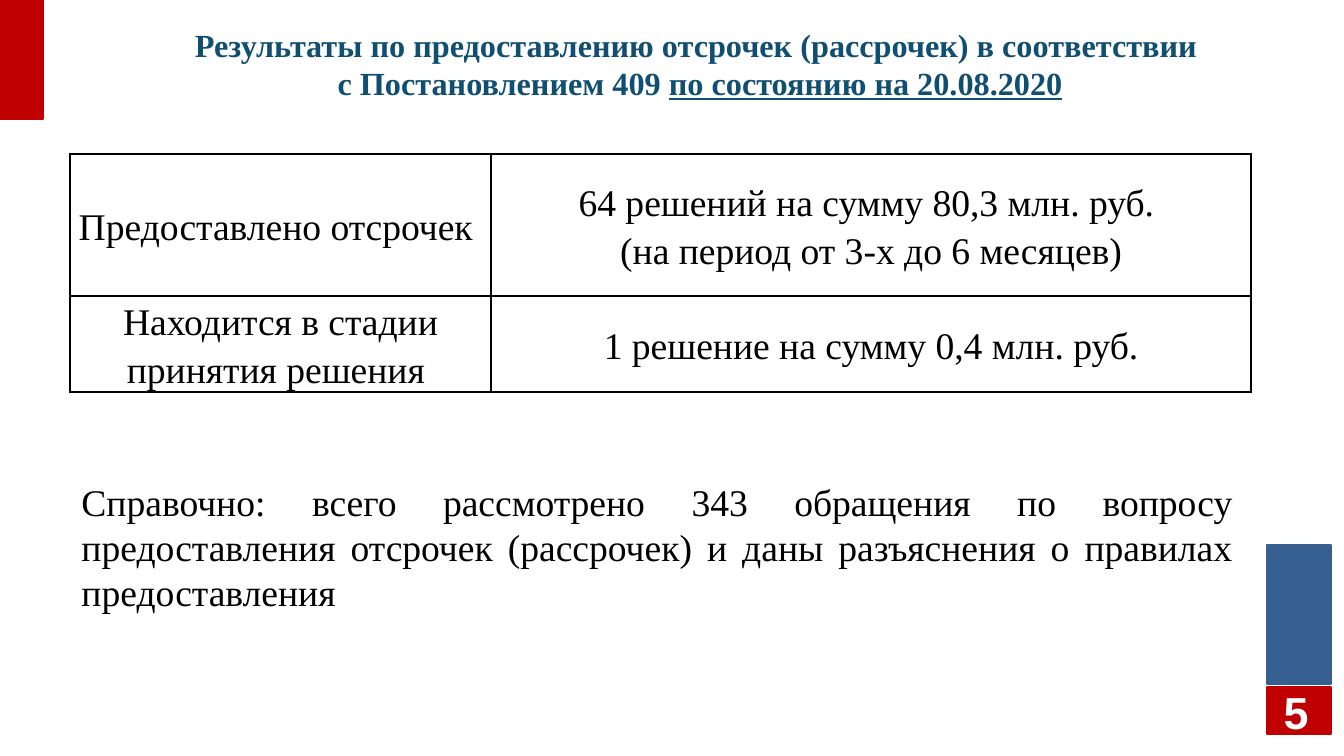
import pptx
import pptx.util
import pptx.dml.color
import pptx.enum.shapes
import pptx.enum.text
import pptx.oxml

SCALE = 9456
SLIDE = (1344, 756)
SERIF = "Times New Roman"
BLOCKS = [
    ((1267, 545, 64, 139), "376092", "3A5F8C"),
    ((1267, 687, 64, 47), "C00000", "C00000"),
    ((0, 0, 43, 119), "C00000", "C00000"),
]
TITLE_BOX = (56, 13, 1288, 101)
TITLE = "Результаты по предоставлению отсрочек (рассрочек) в соответствии \vс Постановлением 409 "
TITLE_DATE = "по состоянию на 20.08.2020"
NUMBER_BOX = (1268, 691, 56, 41)
NUMBER = "5"
TABLE_AT = (70, 154)
COLUMNS = [421, 760]
ROWS = [142, 96]
CELLS = [
    ["Предоставлено отсрочек ",
     "64 решений на сумму 80,3 млн. руб. \v(на период от 3-х до 6 месяцев)"],
    ["Находится в стадии принятия решения ", "1 решение на сумму 0,4 млн. руб."],
]
NOTE_BOX = (72, 474, 1170, 192)
NOTE = ("Справочно: всего рассмотрено 343 обращения по вопросу предоставления "
        "отсрочек (рассрочек) и даны разъяснения о правилах предоставления")
BORDER = ('<a:{} xmlns:a="http://schemas.openxmlformats.org/drawingml/2006/main" w="12700">'
          '<a:solidFill><a:srgbClr val="000000"/></a:solidFill></a:{}>')
ALIGN = pptx.enum.text.PP_ALIGN
MIDDLE = pptx.enum.text.MSO_ANCHOR.MIDDLE


def px(n):
    return pptx.util.Emu(n * SCALE)


def rgb(value):
    return pptx.dml.color.RGBColor.from_string(value)


def place(s, box):
    s.left, s.top, s.width, s.height = map(px, box)


def style(p, size, color, font=SERIF, bold=False, align=ALIGN.CENTER):
    p.alignment = align
    for r in p.runs:
        r.font.name, r.font.size, r.font.bold = font, pptx.util.Pt(size), bold
        r.font.color.rgb = rgb(color)


def center_frame(tf):
    tf.word_wrap = True
    tf.auto_size = pptx.enum.text.MSO_AUTO_SIZE.NONE
    tf.vertical_anchor = MIDDLE
    tf.margin_left = tf.margin_right = 0
    tf.margin_top = tf.margin_bottom = px(5)


def add_blocks(slide):
    for box, fill, line in BLOCKS:
        s = slide.shapes.add_shape(pptx.enum.shapes.MSO_SHAPE.RECTANGLE, *map(px, box))
        s.shadow.inherit = False
        s.fill.solid()
        s.fill.fore_color.rgb = rgb(fill)
        s.line.color.rgb = rgb(line)
        s.line.width = pptx.util.Pt(2)


def add_title(slide):
    s = slide.shapes.title
    place(s, TITLE_BOX)
    center_frame(s.text_frame)
    p = s.text_frame.paragraphs[0]
    p.text = TITLE
    r = p.add_run()
    r.text = TITLE_DATE
    style(p, 24, "104E72", bold=True)
    r.font.underline = True


def add_number(slide):
    tf = slide.shapes.add_textbox(*map(px, NUMBER_BOX)).text_frame
    center_frame(tf)
    tf.text = NUMBER
    style(tf.paragraphs[0], 33.4, "FFFFFF", "Arial", True)


def fill_cell(cell, text):
    cell.text_frame.text = text
    cell.vertical_anchor = MIDDLE
    cell.margin_left = cell.margin_right = px(4)
    cell.margin_top = cell.margin_bottom = 0
    p = cell.text_frame.paragraphs[0]
    p.line_spacing = 1.15
    style(p, 28, "000000")
    cell.fill.background()
    props = cell._tc.get_or_add_tcPr()
    for i, side in enumerate(("lnL", "lnR", "lnT", "lnB")):
        props.insert(i, pptx.oxml.parse_xml(BORDER.format(side, side)))


def add_results(slide):
    box = (*TABLE_AT, sum(COLUMNS), sum(ROWS))
    table = slide.shapes.add_table(len(ROWS), len(COLUMNS), *map(px, box)).table
    table.first_row = table.horz_banding = False
    for column, width in zip(table.columns, COLUMNS):
        column.width = px(width)
    for row, height, texts in zip(table.rows, ROWS, CELLS):
        row.height = px(height)
        for cell, text in zip(row.cells, texts):
            fill_cell(cell, text)


def add_note(slide):
    tf = slide.shapes.add_textbox(*map(px, NOTE_BOX)).text_frame
    tf.word_wrap = True
    tf.text = NOTE
    style(tf.paragraphs[0], 28, "000000", align=ALIGN.JUSTIFY)


def main():
    """Build the slide on the results of deferral requests."""
    prs = pptx.Presentation()
    prs.slide_width, prs.slide_height = map(px, SLIDE)
    slide = prs.slides.add_slide(prs.slide_layouts[5])
    add_blocks(slide)
    add_title(slide)
    add_number(slide)
    add_results(slide)
    add_note(slide)
    prs.save("out.pptx")


if __name__ == "__main__":
    main()
